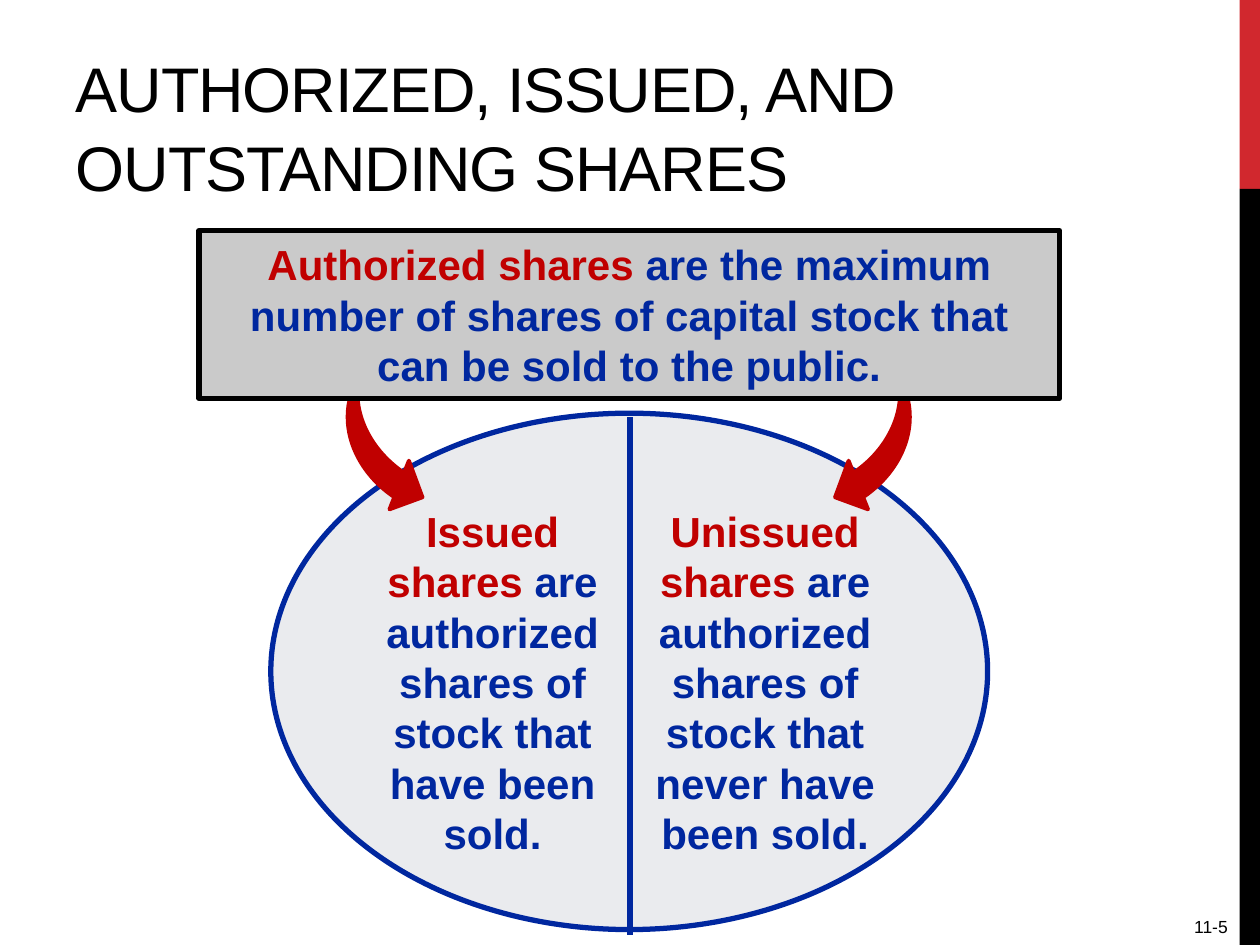
from pptx import Presentation, util as u
from pptx.dml.color import RGBColor
from pptx.enum import shapes as sh, text as tx
from pptx.oxml.ns import qn
from lxml import etree

HUES = dict(red="C00000", blue="00279F", black="000000", bar="D1282E",
            gray="CACACA", pale="EAEBEE")

# Content
TITLE = "AUTHORIZED, ISSUED, AND OUTSTANDING SHARES"
TOP = ("Authorized shares ", "are the maximum\nnumber of shares of capital "
       "stock that\ncan be sold to the public.")
HALVES = [  # left, width, term, meaning
    (7.34, 5.18, "Issued shares ",
     "are authorized shares of stock that have been sold."),
    (12.62, 5.61, "Unissued shares ",
     "are authorized shares of stock that never have been sold."),
]
BARS = [(0, 3.81, "bar"), (3.81, 15.24, "black")]  # top, height, hue
ARROWS = [(16.15, -21.7, False), (7.09, 21.7, True)]  # left, turn, mirrored
PAGE = "11-5"

deck = Presentation()
deck.slide_width, deck.slide_height = u.Cm(25.4), u.Cm(19.05)
slide = deck.slides.add_slide(deck.slide_layouts[5])
parts = slide.shapes


def rgb(hue):
    return RGBColor.from_string(HUES[hue])


def place(*box):
    return [u.Cm(n) for n in box]


def stroke(item, hue, width):
    item.line.color.rgb = rgb(hue)
    item.line.width = u.Pt(width)


def block(kind, box, fill, line=None, width=0):
    item = parts.add_shape(kind, *place(*box))
    item.shadow.inherit = False
    item.fill.solid()
    item.fill.fore_color.rgb = rgb(fill)
    if line:
        stroke(item, line, width)
    else:
        item.line.fill.background()
    return item


def style(para, size, align, bold=False, hue="black"):
    para.alignment = align
    font = para.font
    font.name, font.size, font.bold = "Arial", u.Pt(size), bold
    font.color.rgb = rgb(hue)


def define(item, term, rest):
    """Write a red term followed by its blue meaning."""
    item.text_frame.word_wrap = True
    para = item.text_frame.paragraphs[0]
    style(para, 24, tx.PP_ALIGN.CENTER, True, "blue")
    for hue, words in (("red", term), ("blue", rest)):
        for i, line in enumerate(words.split("\n")):
            if i:
                para.add_line_break()
            run = para.add_run()
            run.text = line
            run.font.color.rgb = rgb(hue)


# Side bars
for top, high, hue in BARS:
    block(sh.MSO_SHAPE.RECTANGLE, (24.99, top, 0.41, high), hue)

# Oval with its two halves
block(sh.MSO_SHAPE.OVAL, (5.46, 8.33, 14.45, 10.41), "pale", "blue", 3)
for left, wide, term, rest in HALVES:
    define(parts.add_textbox(*place(left, 10.06, wide, 7.44)), term, rest)
split = parts.add_connector(sh.MSO_CONNECTOR.STRAIGHT,
                            *place(12.7, 8.41, 12.7, 18.85))
stroke(split, "blue", 4)
etree.SubElement(split._element.spPr, qn("a:effectLst"))

# Curved arrows
for left, turn, mirror in ARROWS:
    arrow = block(sh.MSO_SHAPE.CURVED_LEFT_ARROW, (left, 5.93, 2.11, 4.35),
                  "red", "red", 2.25)
    arrow.rotation = turn
    if mirror:
        arrow._element.spPr.find(qn("a:xfrm")).set("flipH", "1")

# Top definition
panel = block(sh.MSO_SHAPE.RECTANGLE, (4.01, 4.65, 17.35, 3.38),
              "gray", "black", 3)
panel.text_frame.vertical_anchor = tx.MSO_ANCHOR.MIDDLE
define(panel, *TOP)

# Title
title = parts.title
title.left, title.top, title.width, title.height = place(1.27, 0.43, 23.29, 3.81)
frame = title.text_frame
frame.text, frame.word_wrap = TITLE, True
frame.auto_size = tx.MSO_AUTO_SIZE.NONE
frame.vertical_anchor = tx.MSO_ANCHOR.BOTTOM
head = frame.paragraphs[0]
style(head, 36, tx.PP_ALIGN.LEFT)
head.line_spacing = 1.05
head.runs[0].font._element.set("spc", "-60")

# Page number
page = parts.add_textbox(*place(22.66, 18.34, 2.34, 0.71)).text_frame
page.text, page.word_wrap = PAGE, True
style(page.paragraphs[0], 10, tx.PP_ALIGN.RIGHT)

deck.save("out.pptx")
